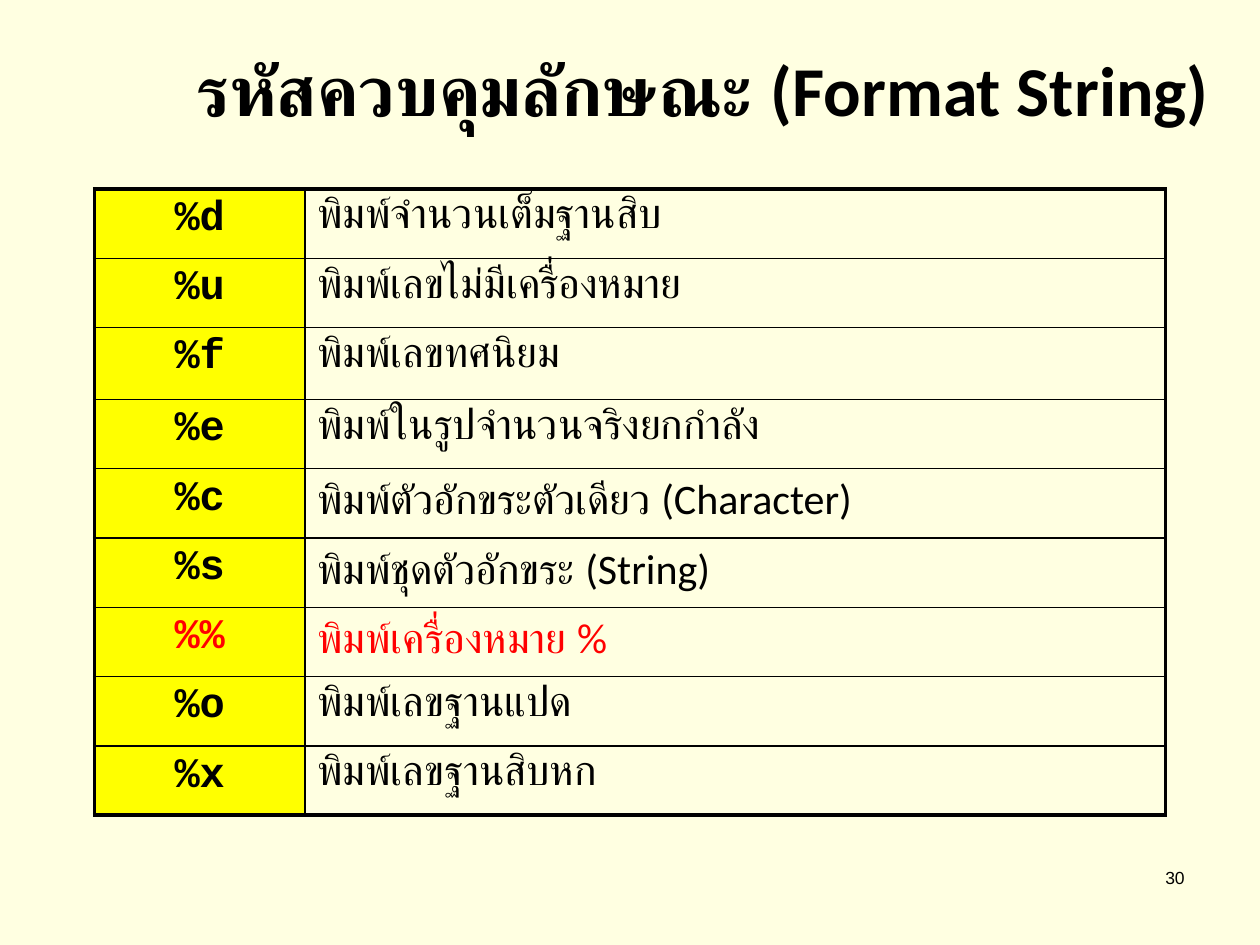
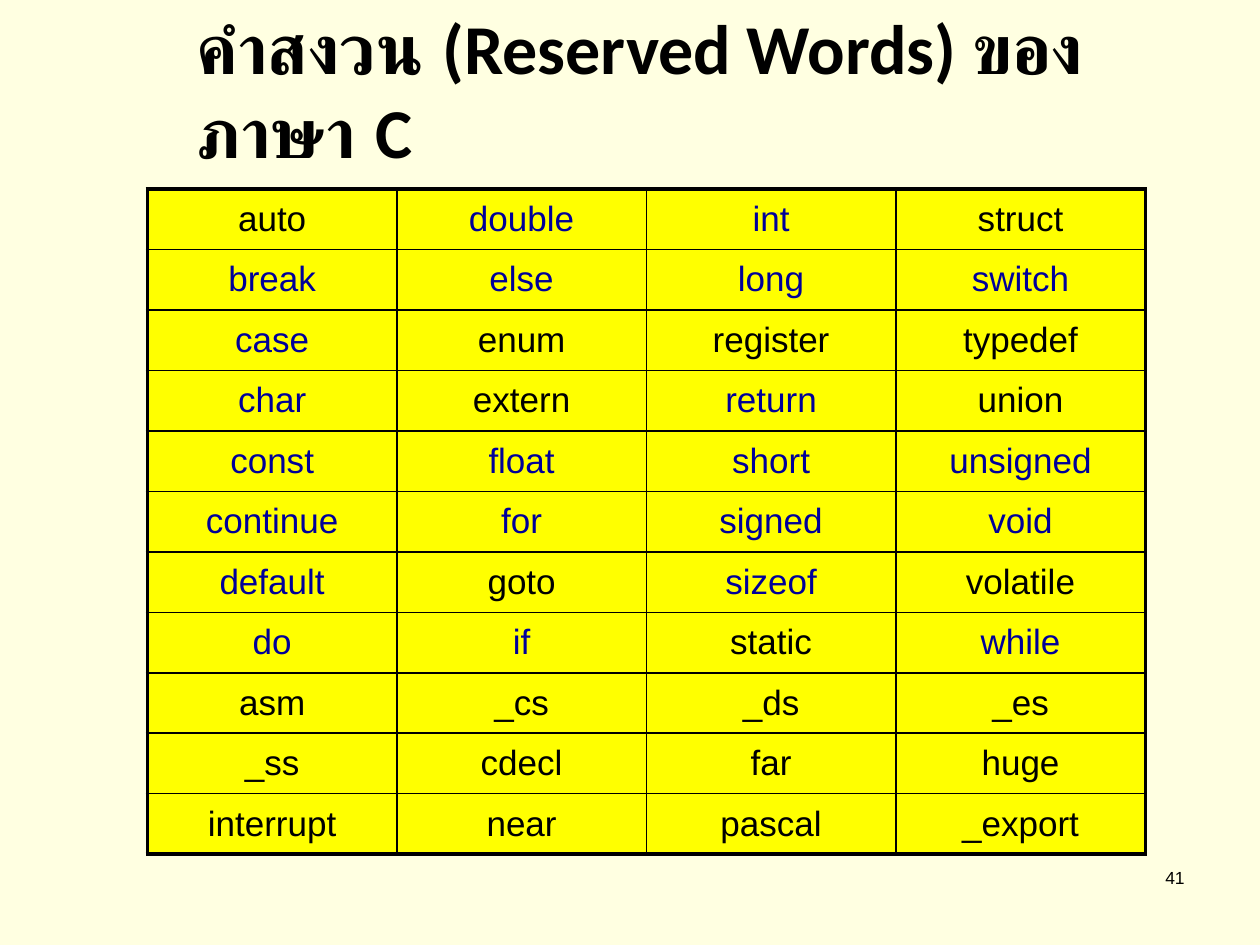
from dataclasses import dataclass

from lxml import etree
from pptx import Presentation
from pptx.dml.color import RGBColor
from pptx.enum import text as enums
from pptx.oxml import ns
from pptx.util import Inches, Length, Pt

CREAM = RGBColor(0xFF, 0xFF, 0xE1)
YELLOW = RGBColor(0xFF, 0xFF, 0x00)
BLACK = RGBColor(0x00, 0x00, 0x00)
RED = RGBColor(0xFF, 0x00, 0x00)
NAVY = RGBColor(0x00, 0x00, 0x99)

OUTER_LINE = Pt(2.25)
INNER_LINE = Pt(1)
TABLE_TOP = Inches(1.5)


@dataclass(frozen=True)
class TextStyle:
    font: str
    size: float
    color: RGBColor = BLACK
    bold: bool = False
    alignment: enums.PP_ALIGN = enums.PP_ALIGN.LEFT


@dataclass(frozen=True)
class Cell:
    words: str
    style: TextStyle
    fill: RGBColor = YELLOW


LEFT, CENTER, RIGHT = enums.PP_ALIGN.LEFT, enums.PP_ALIGN.CENTER, enums.PP_ALIGN.RIGHT
TITLE = TextStyle("Calibri", 40, bold=True)
PAGE_NUMBER = TextStyle("Arial", 10, alignment=RIGHT)

FORMAT_CODES = [
    ("%d", "พิมพ์จำนวนเต็มฐานสิบ"),
    ("%u", "พิมพ์เลขไม่มีเครื่องหมาย"),
    ("%f", "พิมพ์เลขทศนิยม"),
    ("%e", "พิมพ์ในรูปจำนวนจริงยกกำลัง"),
    ("%c", "พิมพ์ตัวอักขระตัวเดียว (Character)"),
    ("%s", "พิมพ์ชุดตัวอักขระ (String)"),
    ("%%", "พิมพ์เครื่องหมาย %"),
    ("%o", "พิมพ์เลขฐานแปด"),
    ("%x", "พิมพ์เลขฐานสิบหก"),
]
RED_CODE = "%%"

RESERVED_WORDS = [
    "auto double int struct",
    "break else long switch",
    "case enum register typedef",
    "char extern return union",
    "const float short unsigned",
    "continue for signed void",
    "default goto sizeof volatile",
    "do if static while",
    "asm _cs _ds _es",
    "_ss cdecl far huge",
    "interrupt near pascal _export",
]
NAVY_WORDS = set(
    "double int break else long switch case char return const float short unsigned "
    "continue for signed void default sizeof do if while".split()
)


def write(text_frame, words: str, style: TextStyle) -> None:
    paragraph = text_frame.paragraphs[0]
    paragraph.alignment = style.alignment
    run = paragraph.add_run()
    run.text = words
    font_format = {"name": style.font, "size": Pt(style.size), "bold": style.bold}
    for attribute, value in font_format.items():
        setattr(run.font, attribute, value)
    run.font.color.rgb = style.color


def add_titled_slide(presentation, title: str, page: int):
    slide = presentation.slides.add_slide(presentation.slide_layouts[5])
    shape = slide.shapes.title
    place = {"left": Inches(1.46), "top": Inches(0.08),
             "width": Inches(8.5), "height": Inches(1.25)}
    for attribute, value in place.items():
        setattr(shape, attribute, value)
    frame_format = {"word_wrap": True, "auto_size": enums.MSO_AUTO_SIZE.NONE,
                    "vertical_anchor": enums.MSO_ANCHOR.MIDDLE}
    for attribute, value in frame_format.items():
        setattr(shape.text_frame, attribute, value)
    write(shape.text_frame, title, TITLE)

    number = slide.shapes.add_textbox(Inches(7.42), Inches(6.83), Inches(2.08), Inches(0.5))
    number.text_frame.word_wrap = True
    write(number.text_frame, str(page), PAGE_NUMBER)
    return slide


def add_borders(cell, edges: dict[str, bool]) -> None:
    """Draw the four borders; an edge marked True lies on the table's outline."""
    properties = cell._tc.get_or_add_tcPr()
    for side, is_outer in edges.items():
        width = OUTER_LINE if is_outer else INNER_LINE
        line = etree.SubElement(properties, ns.qn(f"a:ln{side}"), w=str(int(width)))
        fill = etree.SubElement(line, ns.qn("a:solidFill"))
        etree.SubElement(fill, ns.qn("a:srgbClr"), val=str(BLACK))


def add_grid(slide, left: Length, widths: list[Length], heights: list[Length],
             rows: list[list[Cell]], anchor: enums.MSO_ANCHOR) -> None:
    table = slide.shapes.add_table(len(heights), len(widths), left, TABLE_TOP,
                                   sum(widths), sum(heights)).table
    table.first_row = table.horz_banding = False
    for column, width in zip(table.columns, widths):
        column.width = width
    for row, height in zip(table.rows, heights):
        row.height = height
    last_row, last_column = len(heights) - 1, len(widths) - 1
    for row_index, row in enumerate(rows):
        for column_index, content in enumerate(row):
            cell = table.cell(row_index, column_index)
            cell.vertical_anchor = anchor
            add_borders(cell, {"L": column_index == 0, "R": column_index == last_column,
                               "T": row_index == 0, "B": row_index == last_row})
            cell.fill.solid()
            cell.fill.fore_color.rgb = content.fill
            write(cell.text_frame, content.words, content.style)


def add_format_string_slide(presentation) -> None:
    slide = add_titled_slide(presentation, "รหัสควบคุมลักษณะ (Format String)", 30)
    rows = []
    for code, meaning in FORMAT_CODES:
        color = RED if code == RED_CODE else BLACK
        rows.append([
            Cell(code, TextStyle("Courier New", 24, color, True, CENTER)),
            Cell(meaning, TextStyle("Calibri", 24, color), CREAM),
        ])
    heights = [Inches(0.55)] * len(rows)
    heights[2] = Inches(0.57)
    add_grid(slide, Inches(0.75), [Inches(1.67), Inches(6.83)], heights, rows,
             enums.MSO_ANCHOR.TOP)


def add_reserved_words_slide(presentation) -> None:
    slide = add_titled_slide(presentation, "คำสงวน (Reserved Words) ของภาษา C", 41)
    rows = [
        [Cell(word, TextStyle("Arial", 20, NAVY if word in NAVY_WORDS else BLACK,
                              alignment=CENTER))
         for word in line.split()]
        for line in RESERVED_WORDS
    ]
    add_grid(slide, Inches(1.17), [Inches(1.98)] * 4, [Inches(0.48)] * len(rows), rows,
             enums.MSO_ANCHOR.MIDDLE)


def main() -> None:
    presentation = Presentation()
    presentation.slide_width, presentation.slide_height = Inches(10), Inches(7.5)
    background = presentation.slide_master.background.fill
    background.solid()
    background.fore_color.rgb = CREAM
    add_format_string_slide(presentation)
    add_reserved_words_slide(presentation)
    presentation.save("out.pptx")


if __name__ == "__main__":
    main()
